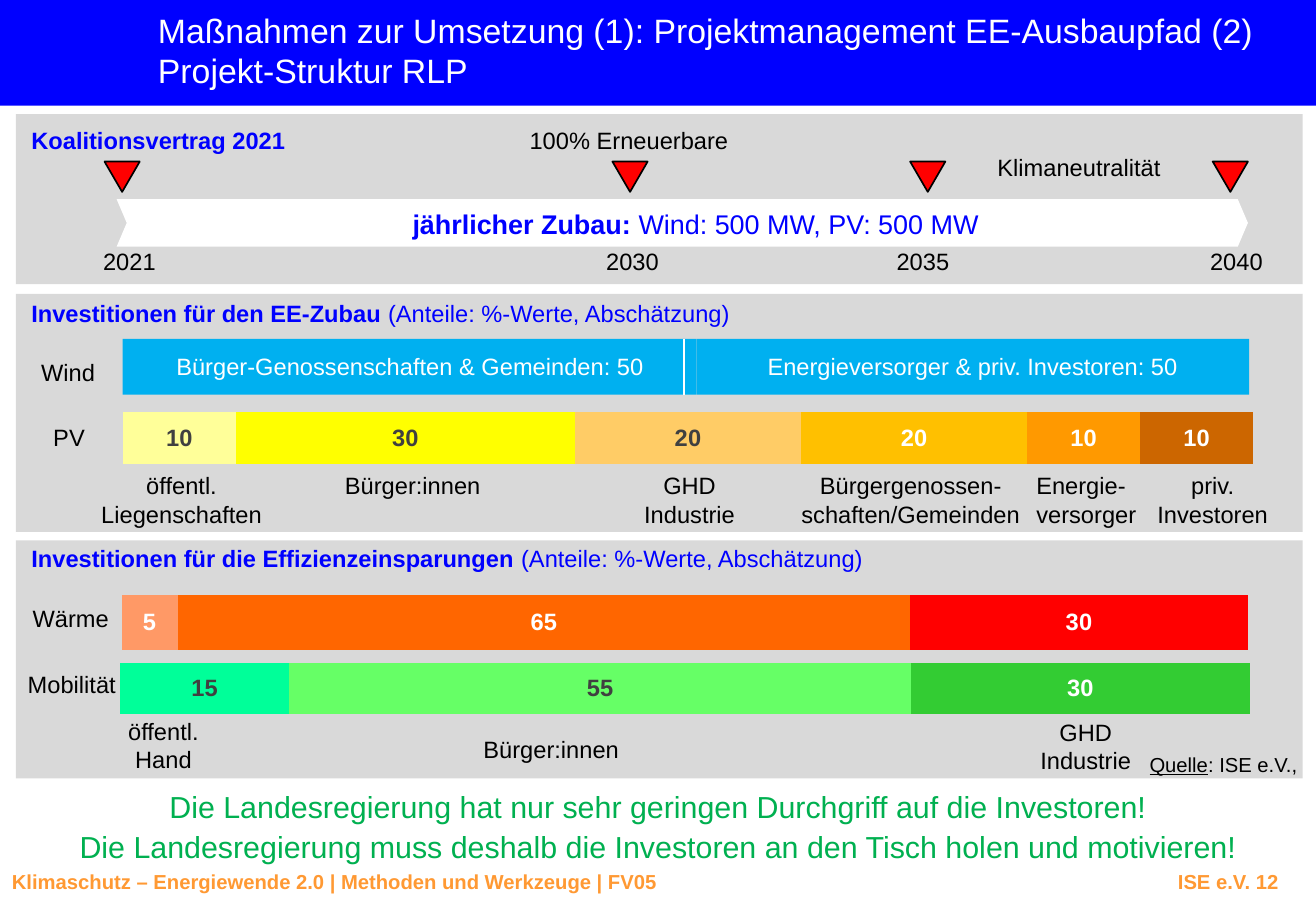
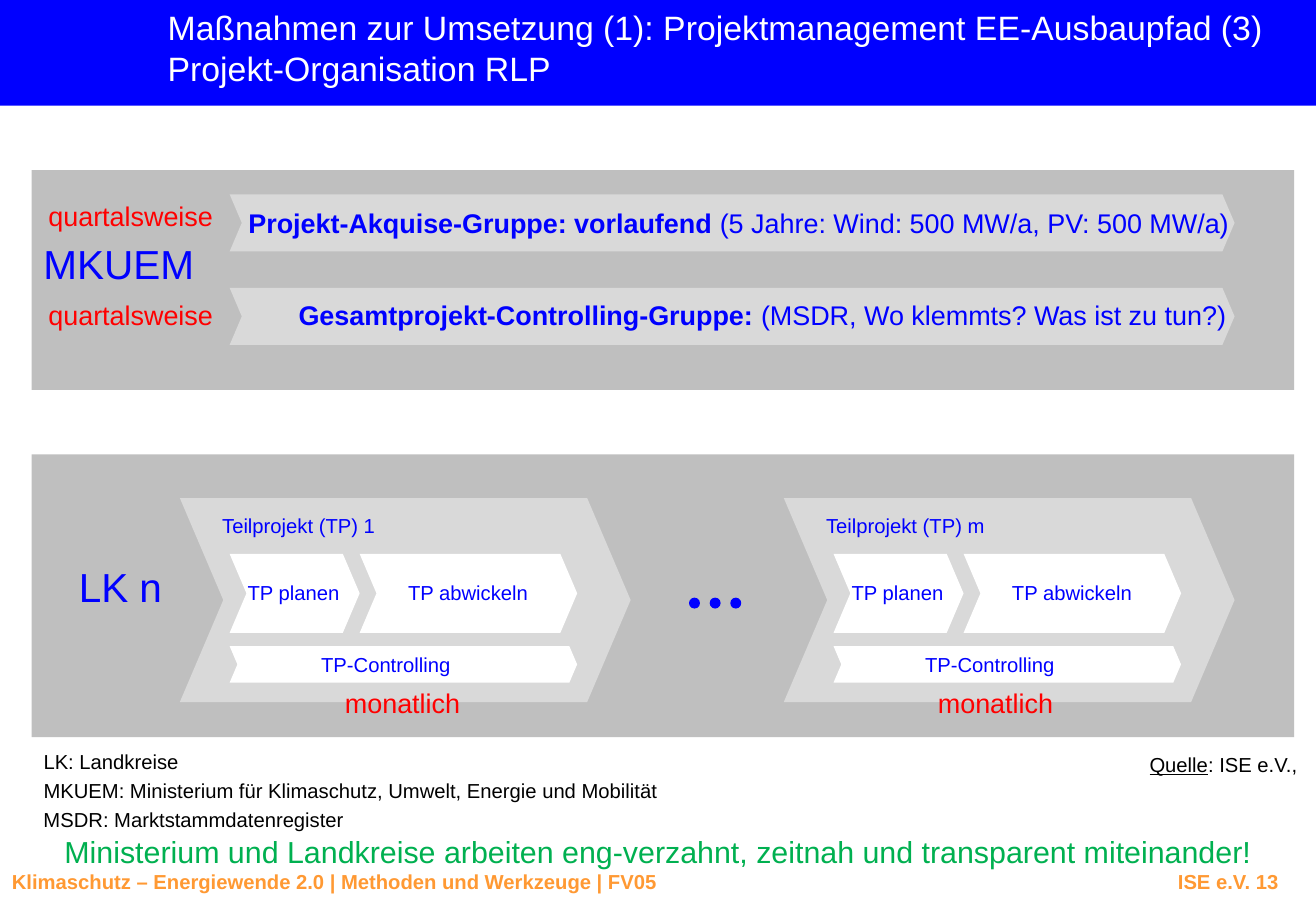
from dataclasses import dataclass

from pptx import Presentation
from pptx.chart.data import CategoryChartData
from pptx.dml.color import RGBColor
from pptx.enum.chart import XL_CHART_TYPE
from pptx.enum.shapes import MSO_CONNECTOR, MSO_SHAPE
from pptx.enum.text import MSO_AUTO_SIZE, PP_ALIGN
from pptx.oxml import parse_xml
from pptx.oxml.ns import nsdecls, qn
from pptx.util import Pt

RECT, CHEVRON = MSO_SHAPE.RECTANGLE, MSO_SHAPE.CHEVRON
TRIANGLE, OVAL = MSO_SHAPE.ISOSCELES_TRIANGLE, MSO_SHAPE.OVAL
STRAIGHT = MSO_CONNECTOR.STRAIGHT
LEFT, CENTER, RIGHT = PP_ALIGN.LEFT, PP_ALIGN.CENTER, PP_ALIGN.RIGHT
GROW = MSO_AUTO_SIZE.SHAPE_TO_FIT_TEXT
STACKED = XL_CHART_TYPE.BAR_STACKED_100
PX = 9144


@dataclass(frozen=True)
class Theme:
    font: str = "Arial"
    blue: str = "0000FF"
    white: str = "FFFFFF"
    black: str = "000000"
    dark: str = "404040"
    red: str = "FF0000"
    green: str = "00B050"
    orange: str = "FF9933"
    sky: str = "00B0F0"
    light: str = "D9D9D9"
    grey: str = "BFBFBF"
    small: int = 12
    body: int = 14
    large: int = 16
    message: int = 18
    title: int = 20
    unit: int = 24


T = Theme()


def add_box(s, kind, x, y, w, h, fill, line=None):
    sp = s.shapes.add_shape(kind, x * PX, y * PX, w * PX, h * PX)
    sp.shadow.inherit = False
    sp.fill.solid()
    sp.fill.fore_color.rgb = RGBColor.from_string(fill)
    if line:
        sp.line.color.rgb = RGBColor.from_string(line)
        sp.line.width = Pt(1)
    else:
        sp.line.fill.background()
    if kind == CHEVRON:
        sp.adjustments[0] = 0.213
    return sp


def add_text(s, x, y, w, h, size, color, *lines, lead="", underline=False,
             bold=False, align=LEFT, wrap=False, inset=True):
    tf = s.shapes.add_textbox(x * PX, y * PX, w * PX, h * PX).text_frame
    tf.word_wrap = wrap
    tf.auto_size = GROW
    if not inset:
        tf.margin_left = tf.margin_right = tf.margin_top = tf.margin_bottom = 0
    for i, line in enumerate(lines):
        p = tf.add_paragraph() if i else tf.paragraphs[0]
        if lead:
            r = p.add_run()
            r.text = lead
            if underline:
                r.font.underline = True
            else:
                r.font.bold = True
            p.add_run().text = line
        else:
            p.text = line
        p.alignment = align
        p.font.name = T.font
        p.font.size = Pt(size)
        p.font.bold = bold
        p.font.color.rgb = RGBColor.from_string(color)


prs = Presentation()
prs.slide_width, prs.slide_height = 1083 * PX, 750 * PX

titles = [(130, 8, "(2)", "Projekt-Struktur RLP"),
          (138, 6, "(3)", "Projekt-Organisation RLP")]
for x, y, part, subtitle in titles:
    s = prs.slides.add_slide(prs.slide_layouts[6])
    add_box(s, RECT, -1, 0, 1084, 87, T.blue)
    add_text(s, x, y, 914, 67, T.title, T.white,
             f"Maßnahmen zur Umsetzung (1): Projektmanagement EE-Ausbaupfad {part}",
             subtitle, wrap=True, inset=False)
structure, organisation = prs.slides

s = structure
for y, h in [(94, 140), (242, 196), (445, 196)]:
    add_box(s, RECT, 13, y, 1059, h, T.light)

add_text(s, 16, 99, 230, 34, T.body, T.blue, "Koalitionsvertrag 2021", bold=True)
add_box(s, CHEVRON, 96, 164, 931, 39, T.white)
for year, x, marker_x in [("2021", 75, 86), ("2030", 489, 504),
                          ("2035", 728, 749), ("2040", 986, 998)]:
    add_box(s, TRIANGLE, marker_x, 133, 29, 25, T.red, T.black).rotation = 180
    add_text(s, x, 198, 64, 34, T.body, T.black, year)
add_text(s, 118, 166, 909, 37, T.large, T.blue, "Wind: 500 MW, PV: 500 MW",
         lead="jährlicher Zubau: ", align=CENTER, wrap=True)

for y, w, heading in [(241, 597, "Investitionen für den EE-Zubau "),
                      (443, 712, "Investitionen für die Effizienzeinsparungen ")]:
    add_text(s, 16, y, w, 34, T.body, T.blue, "(Anteile: %-Werte, Abschätzung)",
             lead=heading)

for x, w, text_x, investor in [
        (101, 472, 112, "Bürger-Genossenschaften & Gemeinden: 50"),
        (573, 455, 575, "Energieversorger & priv. Investoren: 50")]:
    add_box(s, RECT, x, 279, w, 46, T.sky)
    add_text(s, text_x, 285, 451, 34, T.body, T.white, investor,
             align=CENTER, wrap=True)
divider = s.shapes.add_connector(STRAIGHT, 563 * PX, 279 * PX, 563 * PX, 325 * PX)
divider.line.color.rgb = RGBColor.from_string(T.white)
divider.line.width = Pt(1)
divider._element.spPr.append(parse_xml(f"<a:effectLst {nsdecls('a')}/>"))

charts = [
    ((75, 296, 969, 119), (0.027, 0.089, 0.96, 0.911),
     [(10, "FFFF99", T.dark), (30, "FFFF00", T.dark), (20, "FFCC66", T.dark),
      (20, "FFC000", T.white), (10, "FF9900", T.white), (10, "CC6600", T.white)]),
    ((100, 443, 949, 126), (0, 0.102, 0.977, 0.898),
     [(5, "FF9966", T.white), (65, "FF6600", T.white), (30, T.red, T.white)]),
    ((93, 501, 949, 132), (0.006, 0.104, 0.98, 0.793),
     [(15, "00FF99", T.dark), (55, "66FF66", T.dark), (30, "33CC33", T.white)]),
]
for box, layout, shares in charts:
    data = CategoryChartData()
    data.categories = ["1"]
    for i, (value, _, _) in enumerate(shares, 1):
        data.add_series(f"Series {i}", [value])
    chart = s.shapes.add_chart(STACKED, *[v * PX for v in box], data).chart
    chart.has_legend = chart.has_title = False
    chart.font.name = T.font
    chart.font.size = Pt(10)
    chart.font.color.rgb = RGBColor.from_string(T.black)
    chart.value_axis.has_major_gridlines = False
    chart.value_axis.visible = chart.category_axis.visible = False
    plot = chart.plots[0]
    plot.vary_by_categories = False
    plot.gap_width, plot.overlap = 150, 100
    for series, (_, fill, color) in zip(plot.series, shares):
        series.format.fill.solid()
        series.format.fill.fore_color.rgb = RGBColor.from_string(fill)
        labels = series.data_labels
        labels.show_value = True
        labels.font.name = T.font
        labels.font.size = Pt(T.body)
        labels.font.bold = True
        labels.font.color.rgb = RGBColor.from_string(color)
    area = chart._chartSpace.find(f".//{qn('c:plotArea')}")
    for old in area.findall(qn("c:layout")):
        area.remove(old)
    sizes = "".join(f'<c:{k} val="{v}"/>' for k, v in zip("xywh", layout))
    area.insert(0, parse_xml(
        f'<c:layout {nsdecls("c")}><c:manualLayout><c:layoutTarget val="inner"/>'
        f'<c:xMode val="edge"/><c:yMode val="edge"/>{sizes}</c:manualLayout></c:layout>'))
    clear = (f'<c:spPr {nsdecls("c", "a")}><a:noFill/>'
             '<a:ln><a:noFill/></a:ln></c:spPr>')
    area.append(parse_xml(clear))
    chart._chartSpace.find(qn("c:chart")).addnext(parse_xml(clear))

for x, y, w, name in [(24, 290, 65, "Wind"), (34, 343, 46, "PV"),
                      (17, 492, 83, "Wärme"), (13, 547, 93, "Mobilität"),
                      (274, 383, 132, "Bürger:innen"), (388, 600, 132, "Bürger:innen"),
                      (843, 383, 103, "Energie-\nversorger"),
                      (426, 99, 184, "100% Erneuerbare"),
                      (811, 121, 155, "Klimaneutralität")]:
    add_text(s, x, y, w, 34, T.body, T.black, name)
for x, y, w, name in [(73, 383, 153, "öffentl.\nLiegenschaften"),
                      (520, 383, 95, "GHD\nIndustrie"),
                      (649, 383, 201, "Bürgergenossen-\nschaften/Gemeinden"),
                      (942, 383, 112, "priv.\nInvestoren"),
                      (95, 585, 79, "öffentl.\nHand"),
                      (846, 586, 95, "GHD\nIndustrie")]:
    add_text(s, x, y, w, 57, T.body, T.black, name, align=CENTER)

s = organisation
add_box(s, RECT, 26, 140, 1039, 181, T.grey)
add_box(s, RECT, 26, 374, 1039, 233, T.grey)
for y, text_x, text_y, w, group, note in [
        (160, 184, 165, 848, "Projekt-Akquise-Gruppe: vorlaufend ",
         "(5 Jahre: Wind: 500 MW/a, PV: 500 MW/a)"),
        (237, 213, 241, 829, "Gesamtprojekt-Controlling-Gruppe: ",
         "(MSDR, Wo klemmts? Was ist zu tun?)")]:
    add_box(s, CHEVRON, 189, y, 827, 47, T.light)
    add_text(s, text_x, text_y, w, 37, T.large, T.blue, note, lead=group,
             align=CENTER, wrap=True)
for y in (159, 241):
    add_text(s, 30, y, 157, 37, T.large, T.red, "quartalsweise")
add_text(s, 26, 192, 146, 50, T.unit, T.blue, "MKUEM")
add_text(s, 55, 458, 89, 50, T.unit, T.blue, "LK n")

for i in range(3):
    add_box(s, OVAL, 567 + 17 * i, 492, 9, 9, T.blue)
for x, number, month_x in [(148, "1", 274), (645, "m", 762)]:
    add_box(s, CHEVRON, x, 410, 371, 168, T.light)
    add_text(s, x + 25, 418, 179, 30, T.small, T.blue,
             f"Teilprojekt (TP) {number}", wrap=True)
    for dx, y, w, h, text_dx, text_y, text_w, step, align in [
            (41, 456, 107, 65, 46, 473, 97, "TP planen", LEFT),
            (148, 456, 179, 65, 178, 473, 120, "TP abwickeln", LEFT),
            (41, 532, 286, 30, 102, 532, 135, "TP-Controlling", CENTER)]:
        add_box(s, CHEVRON, x + dx, y, w, h, T.white)
        add_text(s, x + text_dx, text_y, text_w, 30, T.small, T.blue, step,
                 align=align)
    add_text(s, month_x, 560, 116, 37, T.large, T.red, "monatlich")

for i, (w, entry) in enumerate([
        (132, "LK: Landkreise"),
        (535, "MKUEM: Ministerium für Klimaschutz, Umwelt, Energie und Mobilität"),
        (274, "MSDR: Marktstammdatenregister")]):
    add_text(s, 26, 612 + 24 * i, w, 30, T.small, T.black, entry)

for s, y, message in [
        (structure, 644,
         "Die Landesregierung hat nur sehr geringen Durchgriff auf die Investoren!"),
        (structure, 677, "Die Landesregierung muss deshalb die Investoren "
                         "an den Tisch holen und motivieren!"),
        (organisation, 681, "Ministerium und Landkreise arbeiten eng-verzahnt, "
                            "zeitnah und transparent miteinander!")]:
    add_text(s, 0, y, 1083, 40, T.message, T.green, message, align=CENTER, wrap=True)

for number, s in enumerate(prs.slides, 12):
    add_text(s, 946, 619, 132, 20, T.small, T.black, ": ISE e.V.,", lead="Quelle",
             underline=True, inset=False)
    add_text(s, 0, 711, 800, 30, T.small, T.orange,
             "Klimaschutz – Energiewende 2.0 | Methoden und Werkzeuge | FV05",
             bold=True, wrap=True)
    add_text(s, 862, 711, 200, 30, T.small, T.orange, f"ISE e.V. {number}",
             bold=True, align=RIGHT, wrap=True)

prs.save("out.pptx")
